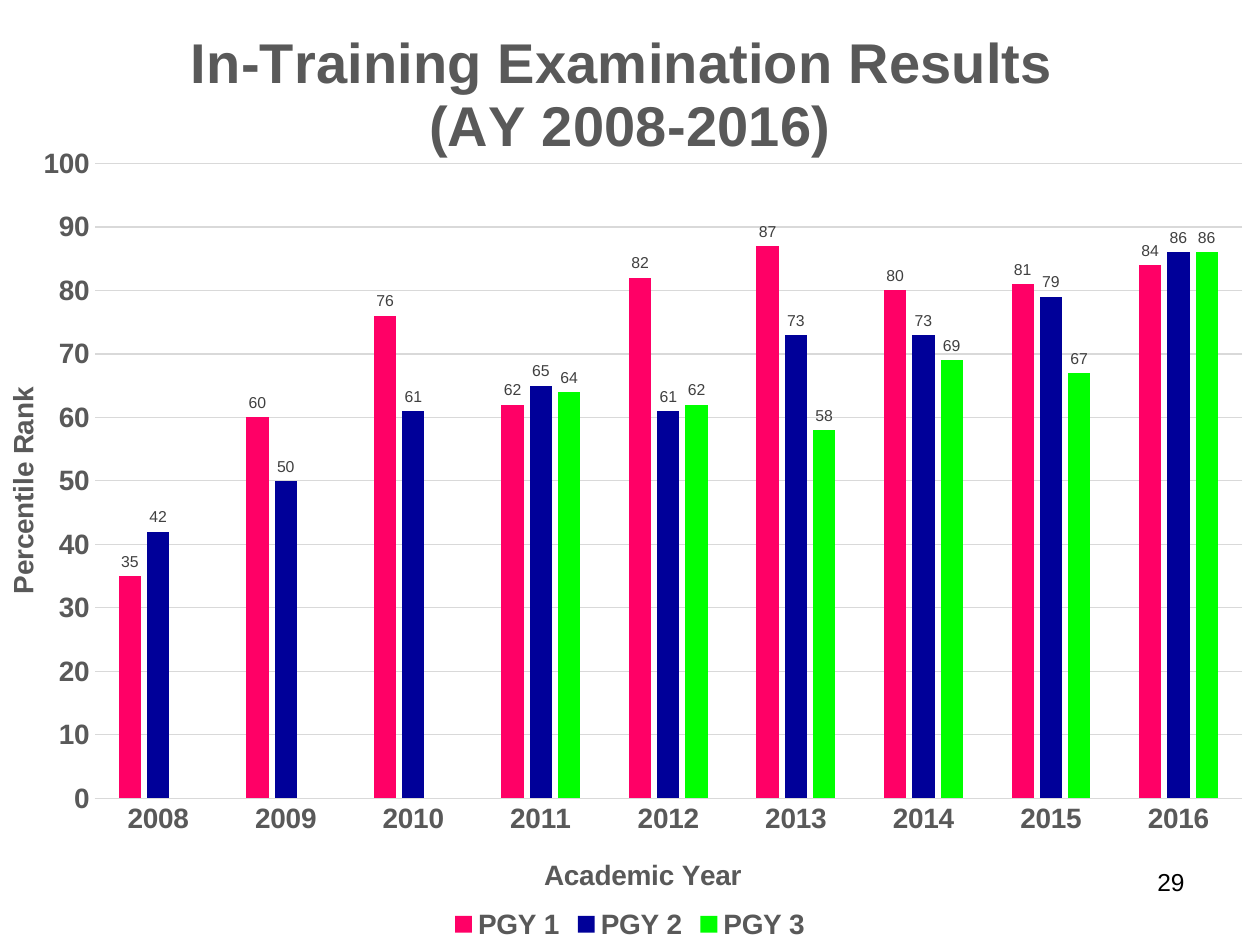
from pptx import Presentation
from pptx.chart.data import CategoryChartData
from pptx.dml.color import RGBColor
from pptx.enum.chart import XL_CHART_TYPE, XL_LABEL_POSITION, XL_LEGEND_POSITION, XL_TICK_MARK
from pptx.enum.text import PP_ALIGN
from pptx.oxml import parse_xml
from pptx.oxml.ns import nsdecls
from pptx.util import Inches, Pt

COLUMNS = XL_CHART_TYPE.COLUMN_CLUSTERED
OUTSIDE = XL_LABEL_POSITION.OUTSIDE_END
BOTTOM = XL_LEGEND_POSITION.BOTTOM
NO_TICK = XL_TICK_MARK.NONE
RIGHT = PP_ALIGN.RIGHT

GRAY, PALE = "595959", "D9D9D9"
BOLD = {"name": "Arial", "size": Pt(16), "bold": True}
HEAD = {"name": "Arial", "size": Pt(32), "bold": True}
LABEL = {"name": "Arial", "size": Pt(9), "bold": False}
PLAIN = {"name": "Arial", "size": Pt(14)}

YEARS = [str(year) for year in range(2008, 2017)]
SERIES = [
    ("PGY 1", "FF0066", [35, 60, 76, 62, 82, 87, 80, 81, 84]),
    ("PGY 2", "000099", [42, 50, 61, 65, 61, 73, 73, 79, 86]),
    ("PGY 3", "00FF00", [None, None, None, 64, 62, 58, 69, 67, 86]),
]
PLOT = {"x": 0.075, "y": 0.173, "w": 0.911, "h": 0.672}


def color(value):
    return RGBColor.from_string(value)


def style(item, values):
    for name, value in values.items():
        setattr(item, name, value)


def set_font(font, values, shade):
    style(font, values)
    font.color.rgb = color(shade)


def set_line(line, shade):
    line.color.rgb = color(shade)
    line.width = Pt(0.75)


def set_title(owner, lines, values):
    """Give a chart or an axis a title, one paragraph for each line."""
    frame = (owner.chart_title if hasattr(owner, "chart_title")
             else owner.axis_title).text_frame
    frame.text = "\n".join(lines)
    for para in frame.paragraphs:
        set_font(para.font, values, GRAY)
        for run in para.runs:
            set_font(run.font, values, GRAY)


def set_axis(axis, title):
    style(axis, {"major_tick_mark": NO_TICK, "minor_tick_mark": NO_TICK})
    set_font(axis.tick_labels.font, BOLD, GRAY)
    set_title(axis, [title], BOLD)


def place_plot(chart):
    """Fix the inner plot area as fractions of the chart."""
    area = chart.element.xpath("c:chart/c:plotArea")[0]
    for old in area.xpath("c:layout"):
        area.remove(old)
    modes = '<c:xMode val="edge"/><c:yMode val="edge"/>'
    sizes = "".join(f'<c:{key} val="{val}"/>' for key, val in PLOT.items())
    area.insert(0, parse_xml(
        f'<c:layout {nsdecls("c")}><c:manualLayout>'
        f'<c:layoutTarget val="inner"/>{modes}{sizes}'
        '</c:manualLayout></c:layout>'))


def add_results(slide, box):
    data = CategoryChartData()
    data.categories = YEARS
    for name, _, vals in SERIES:
        data.add_series(name, vals)
    chart = slide.shapes.add_chart(COLUMNS, *box, data).chart
    set_font(chart.font, {"name": "Arial", "size": Pt(10)}, "000000")
    set_title(chart, ["In-Training Examination Results ", "(AY 2008-2016)"], HEAD)
    place_plot(chart)

    # Axes
    years, ranks = chart.category_axis, chart.value_axis
    set_axis(years, "Academic Year")
    set_axis(ranks, "Percentile Rank")
    set_line(years.format.line, PALE)
    style(ranks, {"minimum_scale": 0, "maximum_scale": 100, "major_unit": 10})
    ranks.format.line.fill.background()
    set_line(ranks.major_gridlines.format.line, PALE)

    # Bars and their values
    plot = chart.plots[0]
    style(plot, {"gap_width": 219, "overlap": -27, "vary_by_categories": False})
    for bars, (_, shade, _) in zip(plot.series, SERIES):
        bars.invert_if_negative = False
        bars.format.fill.solid()
        bars.format.fill.fore_color.rgb = color(shade)
        labels = bars.data_labels
        style(labels, {"show_value": True, "position": OUTSIDE})
        set_font(labels.font, LABEL, "404040")

    # Legend
    chart.has_legend = True
    style(chart.legend, {"position": BOTTOM, "include_in_layout": False})
    set_font(chart.legend.font, BOLD, GRAY)


def add_number(slide, box, text):
    frame = slide.shapes.add_textbox(*box).text_frame
    frame.word_wrap = True
    para = frame.paragraphs[0]
    para.alignment = RIGHT
    run = para.add_run()
    run.text = text
    set_font(run.font, PLAIN, "000000")


def main():
    deck = Presentation()
    style(deck, {"slide_width": Inches(10), "slide_height": Inches(7.5)})
    slide = deck.slides.add_slide(deck.slide_layouts[6])
    add_number(slide, [Inches(n) for n in (7.17, 6.83, 2.33, 0.52)], "29")
    add_results(slide, [Inches(n) for n in (0, 0, 10, 7.5)])
    deck.save("out.pptx")


if __name__ == "__main__":
    main()
